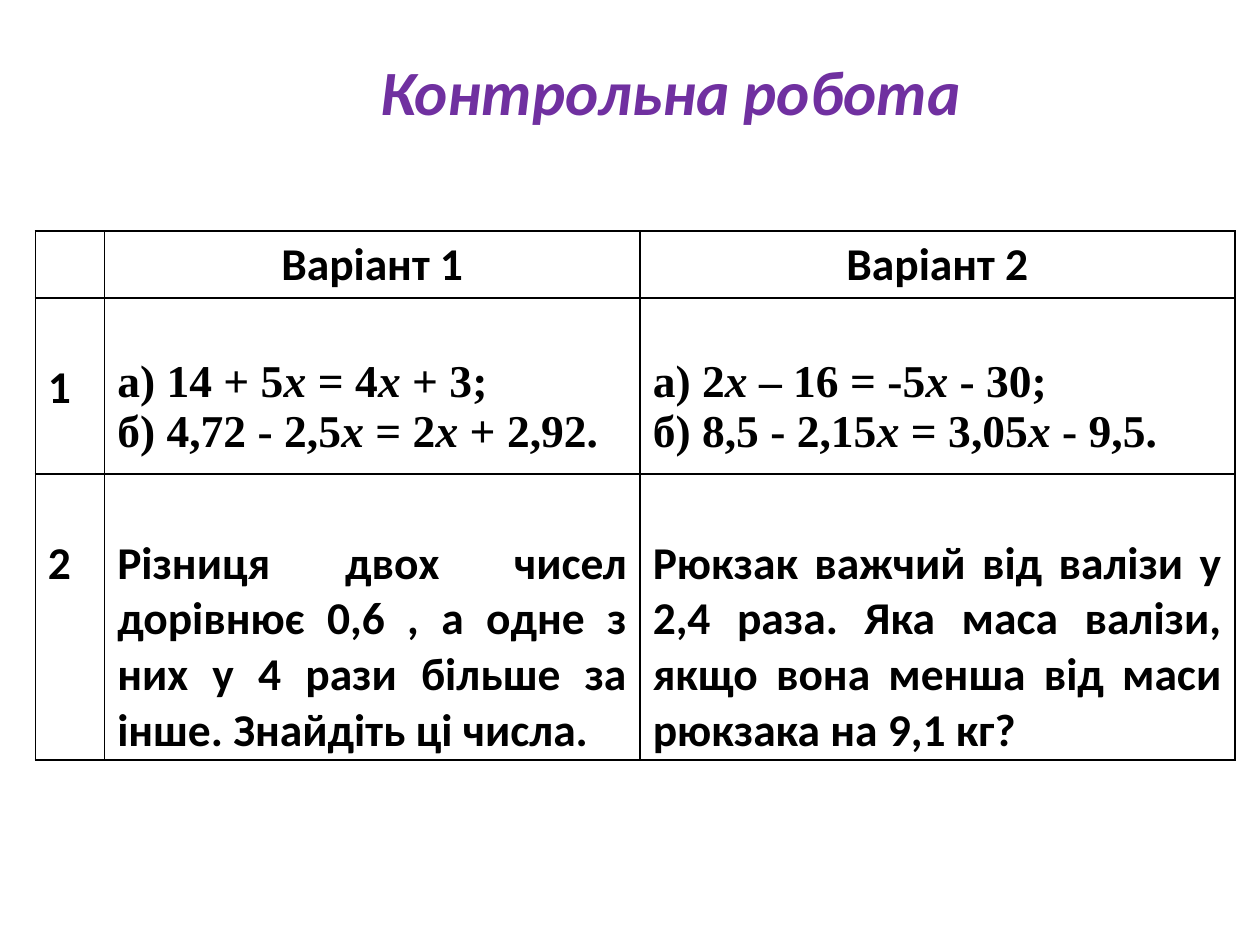
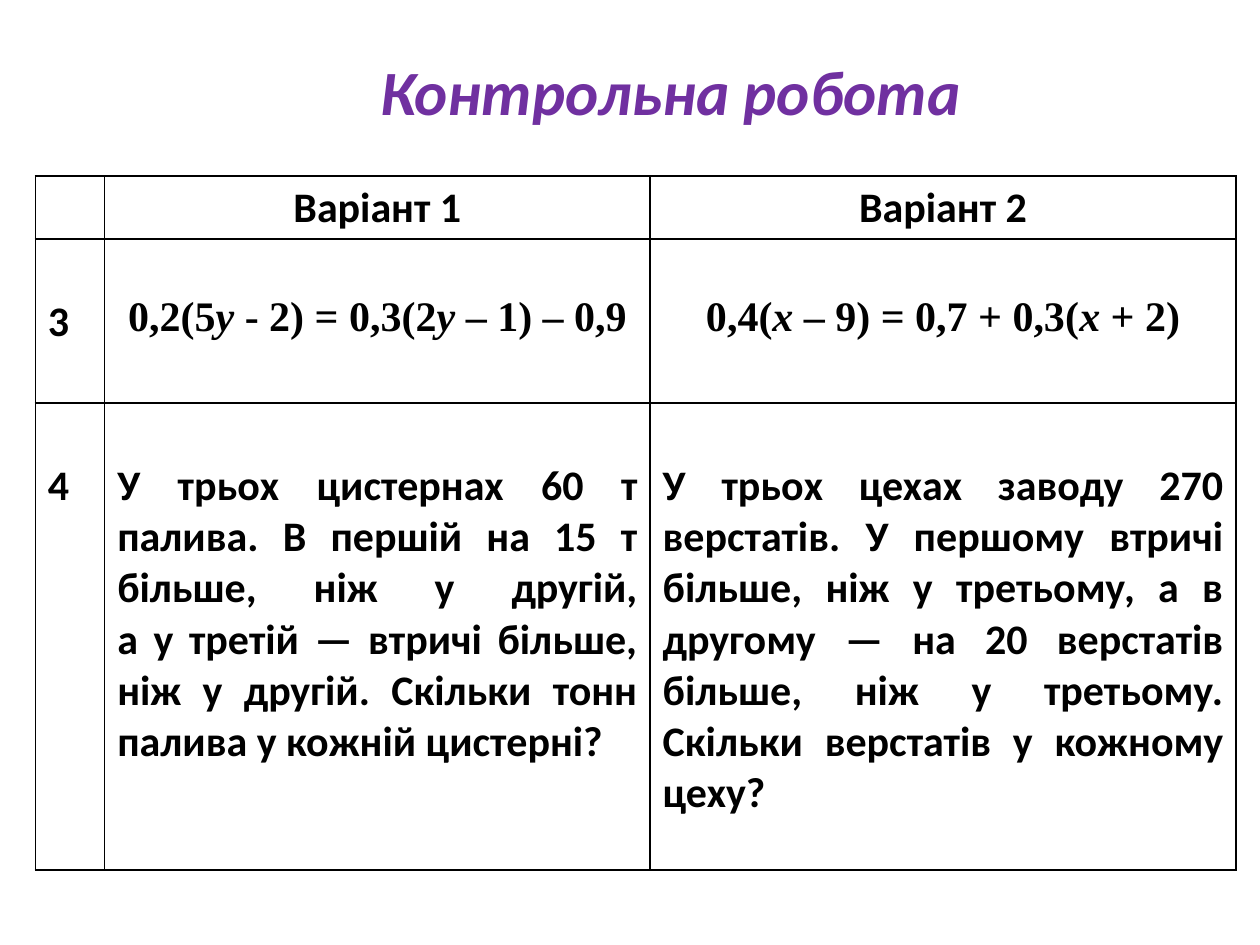
"""Build two slides of a maths test, each with a title and a table of tasks."""
from lxml import etree
from pptx import Presentation
from pptx.dml.color import RGBColor
from pptx.enum.text import MSO_ANCHOR, MSO_AUTO_SIZE, PP_ALIGN
from pptx.oxml.ns import qn
from pptx.util import Pt

LEFT, CENTER, JUSTIFY = PP_ALIGN.LEFT, PP_ALIGN.CENTER, PP_ALIGN.JUSTIFY
TOP = MSO_ANCHOR.TOP
GROW = MSO_AUTO_SIZE.SHAPE_TO_FIT_TEXT
COLORS = {"title": "7030A0", "text": "000000", "grid": "000000", "paper": "FFFFFF"}
SANS, SERIF = "Calibri", "Times New Roman"
LINE_HEIGHT = {SANS: 1.22, SERIF: 1.15}
CELL_PAD = 3.6
TITLE = "Контрольна робота"
HEADINGS = ["Варіант 1", "Варіант 2"]

TESTS = [
    {
        "top": 132, "size": 26, "equation_align": LEFT,
        "columns": [39.6, 306, 339.9], "rows": [38.3, 100.6, 163.4],
        "numbers": ["1", "2"],
        "equations": [
            ["а) 14 + 5*х* = 4*х* + 3;", "б) 4,72 - 2,5*х* = 2*х* + 2,92."],
            ["а) 2*х* – 16 = -5*х* - 30;", "б) 8,5 - 2,15*х* = 3,05*х* - 9,5."],
        ],
        "problems": [
            ["Різниця двох чисел дорівнює 0,6 , а одне з них у 4 рази більше "
             "за інше. Знайдіть ці числа."],
            ["Рюкзак важчий від валізи у 2,4 раза. Яка маса валізи, якщо вона "
             "менша від маси рюкзака на 9,1 кг?"],
        ],
    },
    {
        "top": 100.6, "size": 24, "equation_align": CENTER,
        "columns": [39.6, 311.7, 334.8], "rows": [36, 93.7, 266.9],
        "numbers": ["3", "4"],
        "equations": [
            ["0,2(5*y *- 2) = 0,3(2*y *– 1) – 0,9"],
            ["0,4(*х* – 9) = 0,7 + 0,3(*х* + 2)"],
        ],
        "problems": [
            ["У трьох цистернах 60 т палива. В першій на 15 т більше, ніж у другій,\n"
             "а у третій — втричі більше, ніж у другій. Скільки тонн палива "
             "у кожній цистерні?"],
            ["У трьох цехах заводу 270 верстатів. У першому втричі більше, ніж "
             "у третьому, а в другому — на 20 верстатів більше, ніж у третьому.\n"
             "Скільки верстатів у кожному цеху?"],
        ],
    },
]


def write_text(frame, lines, *, size, font=SANS, color="text", align=LEFT, italic=False):
    """Write bold paragraphs; asterisks enclose italic spans, newlines break lines."""
    for index, line in enumerate(lines):
        para = frame.add_paragraph() if index else frame.paragraphs[0]
        para.alignment = align
        for row, piece in enumerate(line.split("\n")):
            if row:
                para.add_line_break()
            for turn, text in enumerate(piece.split("*")):
                span = para.add_run()
                span.text = text
                span.font.name = font
                span.font.size = Pt(size)
                span.font.bold = True
                span.font.italic = italic or turn % 2 == 1
                span.font.color.rgb = RGBColor.from_string(COLORS[color])


class TestDeck:
    """Hold the presentation, its style and the current slide."""

    def __init__(self):
        """Start an empty deck of 10 by 7.5 inch slides."""
        self.deck = Presentation()
        self.deck.slide_width, self.deck.slide_height = Pt(720), Pt(540)
        self.page = None

    def add_page(self):
        """Open a blank slide with the shared title."""
        self.page = self.deck.slides.add_slide(self.deck.slide_layouts[6])
        box = self.page.shapes.add_textbox(Pt(210.2), Pt(26.6), Pt(348.5), Pt(51))
        box.text_frame.word_wrap = False
        box.text_frame.auto_size = GROW
        write_text(box.text_frame, [TITLE], size=36, color="title", italic=True)

    def style_cell(self, cell, top_pad):
        """Give a cell its paper fill, padding and thin border."""
        cell.fill.solid()
        cell.fill.fore_color.rgb = RGBColor.from_string(COLORS["paper"])
        cell.vertical_anchor = TOP
        cell.margin_top, cell.margin_bottom = Pt(top_pad), 0
        properties = cell._tc.get_or_add_tcPr()
        for index, side in enumerate(("lnL", "lnR", "lnT", "lnB")):
            border = etree.Element(qn(f"a:{side}"), w=str(Pt(1)))
            fill = etree.SubElement(border, qn("a:solidFill"))
            etree.SubElement(fill, qn("a:srgbClr"), val=COLORS["grid"])
            properties.insert(index, border)

    def fill_cell(self, cell, lines, size, *, font=SANS, align=LEFT, skip_line=True):
        """Write a cell, leaving one line of space above its text if asked."""
        gap = size * LINE_HEIGHT[font] if skip_line else 0
        self.style_cell(cell, CELL_PAD + gap)
        write_text(cell.text_frame, lines, size=size, font=font, align=align)

    def add_tasks(self, test):
        """Add the table with the headings, equations and word problems."""
        columns, rows, size = test["columns"], test["rows"], test["size"]
        table = self.page.shapes.add_table(
            len(rows), len(columns), Pt(20.2), Pt(test["top"]),
            Pt(sum(columns)), Pt(sum(rows))).table
        table.first_row = table.horz_banding = False
        for column, width in zip(table.columns, columns):
            column.width = Pt(width)
        for row, height in zip(table.rows, rows):
            row.height = Pt(height)

        self.style_cell(table.cell(0, 0), CELL_PAD)
        for row, number in enumerate(test["numbers"], 1):
            self.fill_cell(table.cell(row, 0), [number], size)
        variants = zip(HEADINGS, test["equations"], test["problems"])
        for column, (heading, equations, problem) in enumerate(variants, 1):
            self.fill_cell(table.cell(0, column), [heading], size,
                           align=CENTER, skip_line=False)
            self.fill_cell(table.cell(1, column), equations, size,
                           font=SERIF, align=test["equation_align"])
            self.fill_cell(table.cell(2, column), problem, size, align=JUSTIFY)


def main():
    """Build every test page and save the deck."""
    builder = TestDeck()
    for test in TESTS:
        builder.add_page()
        builder.add_tasks(test)
    builder.deck.save("out.pptx")


if __name__ == "__main__":
    main()
